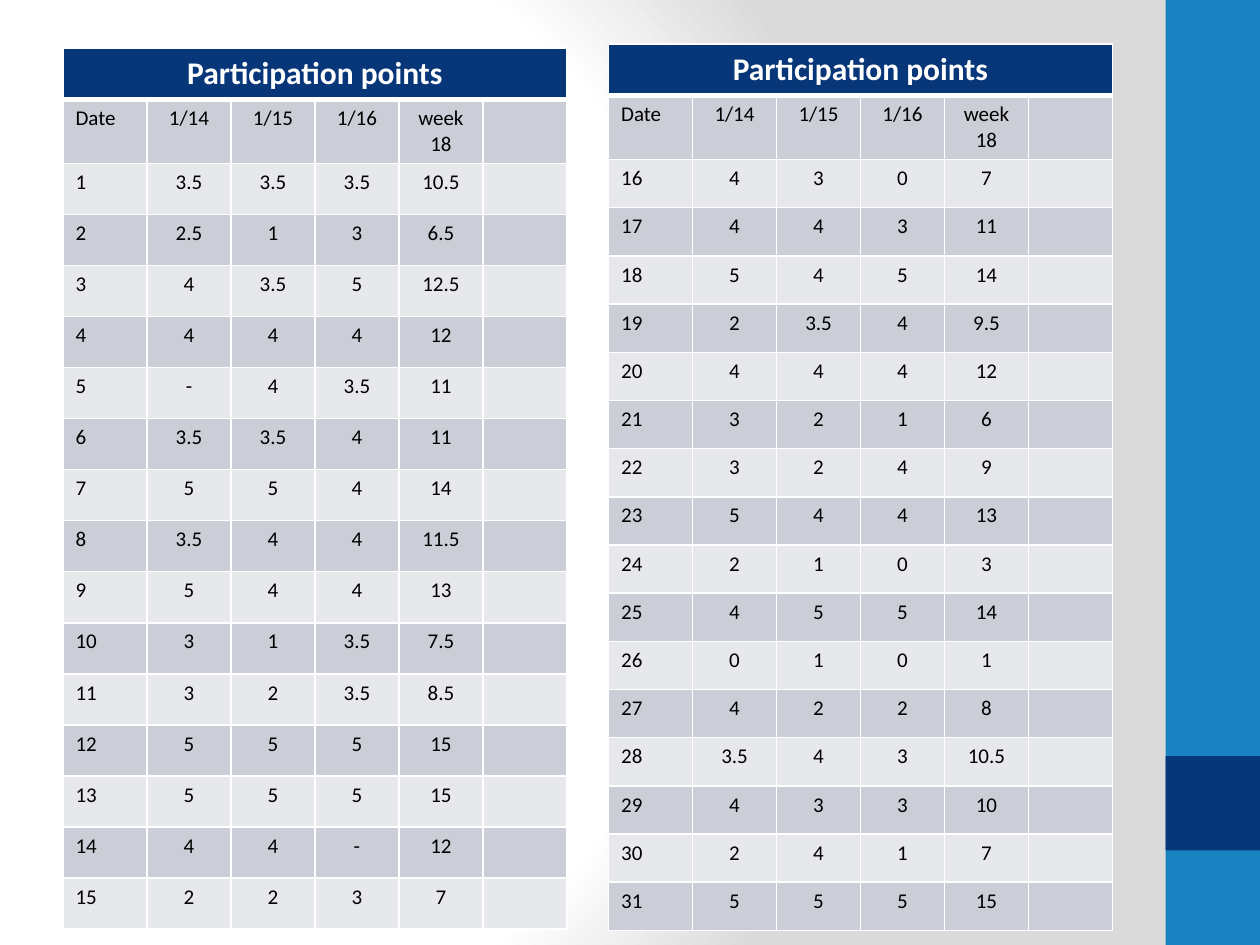
"""Build a slide with two participation points tables beside a blue side band."""
import lxml.etree
import pptx
import pptx.dml.color
import pptx.enum.shapes
import pptx.enum.text
import pptx.oxml
import pptx.oxml.ns
import pptx.util

Inches = pptx.util.Inches
Pt = pptx.util.Pt
RGB = pptx.dml.color.RGBColor.from_string
qn = pptx.oxml.ns.qn

THEME = {
    "font": "Calibri", "title_size": 18, "body_size": 12,
    "white": "FFFFFF", "black": "000000", "gray": "DADADA",
    "blue": "1782BF", "navy": "073779",
    "bands": ("CCCED7", "E7E8EC"),
}
COLUMNS = 6
TITLE_HEIGHT, DATE_HEIGHT = 0.41, 0.5
DATES = ["Date", "1/14", "1/15", "1/16", "week 18"]
FIRST_SCORES = """3.5 3.5 3.5 10.5
2.5 1 3 6.5
4 3.5 5 12.5
4 4 4 12
- 4 3.5 11
3.5 3.5 4 11
5 5 4 14
3.5 4 4 11.5
5 4 4 13
3 1 3.5 7.5
3 2 3.5 8.5
5 5 5 15
5 5 5 15
4 4 - 12
2 2 3 7"""
SECOND_SCORES = """4 3 0 7
4 4 3 11
5 4 5 14
2 3.5 4 9.5
4 4 4 12
3 2 1 6
3 2 4 9
5 4 4 13
2 1 0 3
4 5 5 14
0 1 0 1
4 2 2 8
3.5 4 3 10.5
4 3 3 10
2 4 1 7
5 5 5 15"""


def set_borders(cell, widths):
    properties = cell._tc.get_or_add_tcPr()
    for side, width in zip("LRTB", widths):
        line = lxml.etree.SubElement(properties, qn(f"a:ln{side}"), w=str(Pt(width)))
        fill = lxml.etree.SubElement(line, qn("a:solidFill"))
        lxml.etree.SubElement(fill, qn("a:srgbClr"), val=THEME["white"])


def write_cell(cell, text, size, color, bold, centered):
    para = cell.text_frame.paragraphs[0]
    if centered:
        para.alignment = pptx.enum.text.PP_ALIGN.CENTER
    if text:
        span = para.add_run()
        span.text = text
        span.font.name = THEME["font"]
        span.font.size = Pt(size)
        span.font.bold = bold
        span.font.color.rgb = RGB(color)
    else:
        lxml.etree.SubElement(para._p, qn("a:endParaRPr"), sz=str(size * 100))


deck = pptx.Presentation()
deck.slide_width, deck.slide_height = Inches(10), Inches(7.5)
page = deck.slides.add_slide(deck.slide_layouts[6])

page.background.fill.gradient()
plain_gradient = page._element.find(".//" + qn("a:gradFill"))
stops = "".join(
    f'<a:gs pos="{place * 1000}"><a:srgbClr val="{THEME[color]}"/></a:gs>'
    for place, color in ((0, "white"), (75, "white"), (100, "gray"))
)
circle_gradient = pptx.oxml.parse_xml(
    f'<a:gradFill {pptx.oxml.ns.nsdecls("a")} rotWithShape="1"><a:gsLst>{stops}</a:gsLst>'
    '<a:path path="circle"><a:fillToRect l="20000" t="50000" r="100000" b="50000"/></a:path>'
    "</a:gradFill>"
)
plain_gradient.getparent().replace(plain_gradient, circle_gradient)

for top, height, color in ((0, 7.5, "blue"), (6, 0.75, "navy")):
    band = page.shapes.add_shape(
        pptx.enum.shapes.MSO_SHAPE.RECTANGLE,
        Inches(9.25), Inches(top), Inches(0.75), Inches(height),
    )
    band.shadow.inherit = False
    band.fill.solid()
    band.fill.fore_color.rgb = RGB(THEME[color])
    band.line.fill.background()

for left, top, height, first_number, scores in (
    (0.5, 0.38, 6.99, 1, FIRST_SCORES),
    (4.83, 0.35, 7.03, 16, SECOND_SCORES),
):
    students = [
        [str(number), *line.split()]
        for number, line in enumerate(scores.splitlines(), first_number)
    ]
    rows = [["Participation points"], DATES, *students]
    table = page.shapes.add_table(
        len(rows), COLUMNS, Inches(left), Inches(top), Inches(4), Inches(height)
    ).table
    student_height = (height - TITLE_HEIGHT - DATE_HEIGHT) / len(students)
    heights = [TITLE_HEIGHT, DATE_HEIGHT] + [student_height] * len(students)
    for row_index, values in enumerate(rows):
        table.rows[row_index].height = Inches(heights[row_index])
        is_title = row_index == 0
        widths = (1, 1, 3 if row_index == 1 else 1, 3 if is_title else 1)
        fill = THEME["navy"] if is_title else THEME["bands"][(row_index - 1) % 2]
        size = THEME["title_size" if is_title else "body_size"]
        color = THEME["white" if is_title else "black"]
        for column in range(COLUMNS):
            cell = table.cell(row_index, column)
            set_borders(cell, widths)
            cell.fill.solid()
            cell.fill.fore_color.rgb = RGB(fill)
            text = values[column] if column < len(values) else ""
            write_cell(cell, text, size, color, is_title, is_title or column > 0)
    table.cell(0, 0).merge(table.cell(0, COLUMNS - 1))

deck.save("out.pptx")
